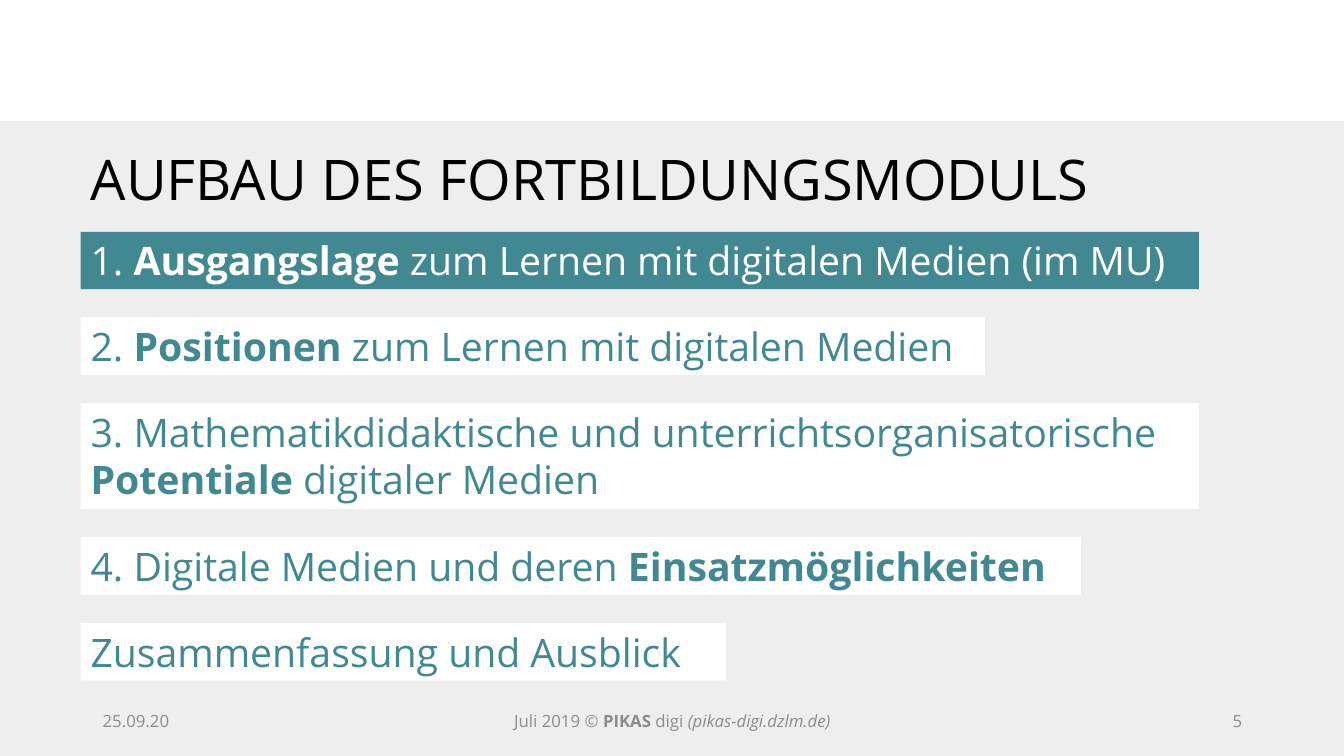
"""Build the agenda slide of the training module."""
from pptx import Presentation
from pptx.dml.color import RGBColor
from pptx.enum.shapes import MSO_SHAPE as Shape
from pptx.enum.text import MSO_ANCHOR as Anchor, MSO_AUTO_SIZE as AutoSize, PP_ALIGN as Align
from pptx.util import Emu, Pt

PX = 9144
COLOURS = {"teal": "428891", "white": "FFFFFF", "panel": "EEEEEE", "black": "000000", "grey": "8C8C8C"}


def add_block(left, top, width, height, fill):
    block = page.shapes.add_shape(Shape.RECTANGLE, *[Emu(n * PX) for n in (left, top, width, height)])
    block.shadow.inherit = False
    block.fill.solid()
    block.fill.fore_color.rgb = RGBColor.from_string(COLOURS[fill])
    block.line.fill.background()
    return block


def write(box, parts, size, colour, align=Align.LEFT, anchor=Anchor.TOP, fit=AutoSize.SHAPE_TO_FIT_TEXT):
    frame = box.text_frame
    frame.word_wrap = True
    frame.auto_size = fit
    frame.vertical_anchor = anchor
    para = frame.paragraphs[0]
    para.alignment = align
    for text, style in parts:
        span = para.add_run()
        span.text = text
        span.font.name = "Open Sans"
        span.font.size = Pt(size)
        span.font.bold = style == "bold"
        span.font.italic = style == "italic"
        span.font.color.rgb = RGBColor.from_string(COLOURS[colour])


deck = Presentation()
deck.slide_width, deck.slide_height = Emu(1333 * PX), Emu(750 * PX)
page = deck.slides.add_slide(deck.slide_layouts[5])

title = page.shapes.title
title.left, title.top, title.width, title.height = [Emu(n * PX) for n in (80, 138, 1174, 77)]
write(title, [("AUFBAU DES FORTBILDUNGSMODULS", "")], 40, "black")

panel = add_block(0, 120, 1333, 630, "panel")
title.element.addprevious(panel.element)

agenda = [
    (1109, 57, "teal", "white",
     [("1. ", ""), ("Ausgangslage", "bold"), (" zum Lernen mit digitalen Medien (im MU)", "")]),
    (897, 57, "white", "teal",
     [("2. ", ""), ("Positionen", "bold"), (" zum Lernen mit digitalen Medien", "")]),
    (1109, 105, "white", "teal",
     [("3. Mathematikdidaktische und unterrichtsorganisatorische ", ""),
      ("Potentiale", "bold"), (" digitaler Medien", "")]),
    (992, 57, "white", "teal",
     [("4. Digitale Medien und deren ", ""), ("Einsatzmöglichkeiten", "bold")]),
    (640, 57, "white", "teal", [("Zusammenfassung und Ausblick", "")]),
]
top = 230
for width, height, fill, colour, parts in agenda:
    write(add_block(80, top, width, height, fill), parts, 28, colour)
    top += height + 28

footer = [
    (92, 300, Align.LEFT, [("25.09.20", "")]),
    (442, 450, Align.CENTER,
     [("Juli 2019 © ", ""), ("PIKAS", "bold"), (" digi ", ""), ("(pikas-digi.dzlm.de)", "italic")]),
    (942, 300, Align.RIGHT, [("5", "")]),
]
for left, width, align, parts in footer:
    box = page.shapes.add_textbox(*[Emu(n * PX) for n in (left, 695, width, 40)])
    write(box, parts, 12, "grey", align, Anchor.MIDDLE, AutoSize.NONE)

deck.save("out.pptx")
